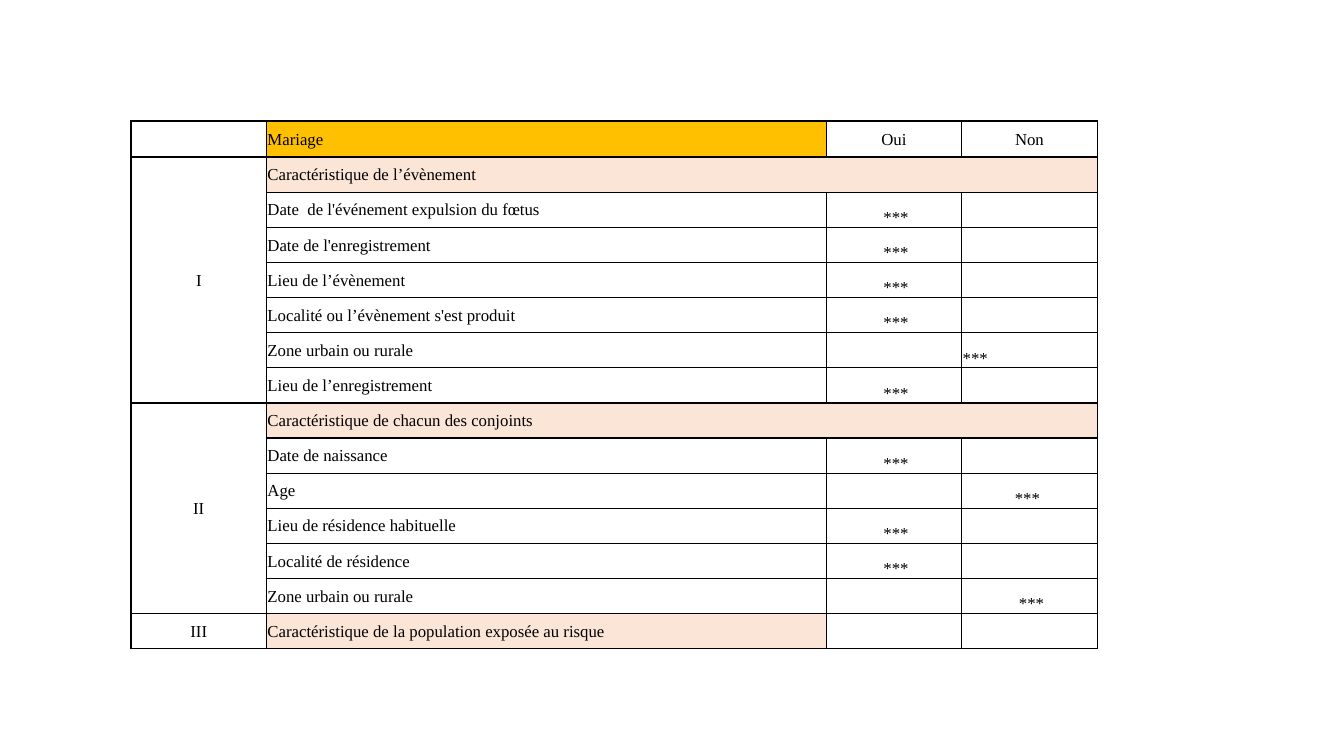
from lxml.etree import SubElement
from pptx import Presentation
from pptx.dml.color import RGBColor
from pptx.enum.text import MSO_ANCHOR as ANCHOR, PP_ALIGN as ALIGN
from pptx.oxml.ns import qn
from pptx.util import Pt

FONT = "Times New Roman"
COLORS = {"ink": "000000", "head": "FFC000", "group": "FBE5D6"}
WIDTHS = [96.8, 399.8, 96.8, 96.8]
HEAD_H, ROW_H = 25.8, 25.1
YES = " ***"
NO = "*** "

# Each row: numeral, label, Oui, Non
ROWS = [
    ("", "Mariage", "Oui", "Non"),
    ("I", "Caractéristique de l’évènement", "", ""),
    ("", "Date  de l'événement expulsion du fœtus", YES, ""),
    ("", "Date de l'enregistrement", YES, ""),
    ("", "Lieu de l’évènement", YES, ""),
    ("", "Localité ou l’évènement s'est produit", YES, ""),
    ("", "Zone urbain ou rurale", "", NO),
    ("", "Lieu de l’enregistrement", YES, ""),
    ("II", "Caractéristique de chacun des conjoints", "", ""),
    ("", "Date de naissance", YES, ""),
    ("", "Age", "", NO),
    ("", "Lieu de résidence habituelle", YES, ""),
    ("", "Localité de résidence", YES, ""),
    ("", "Zone urbain ou rurale", "", YES),
    ("III", "Caractéristique de la population exposée au risque", "", ""),
]
GROUPS = [(1, 7), (8, 13)]  # first and last row of each merged numeral
FILLS = {0: "head", 1: "group", 8: "group", 14: "group"}
LEFT_MARK = (6, 3)  # the one mark that is not centred


def color(name):
    return RGBColor.from_string(COLORS[name])


def add_border(cell):
    props = cell._tc.get_or_add_tcPr()
    for side in ("a:lnL", "a:lnR", "a:lnT", "a:lnB"):
        line = SubElement(props, qn(side), w=str(Pt(1)))
        fill = SubElement(line, qn("a:solidFill"))
        SubElement(fill, qn("a:srgbClr"), val=COLORS["ink"])


def set_fill(cell, name):
    if name:
        cell.fill.solid()
        cell.fill.fore_color.rgb = color(name)
    else:
        cell.fill.background()


def set_text(cell, text, align):
    cell.margin_left = cell.margin_right = cell.margin_top = Pt(0.7)
    cell.margin_bottom = 0
    cell.vertical_anchor = ANCHOR.BOTTOM if "*" in text else ANCHOR.MIDDLE
    cell.text = text
    para = cell.text_frame.paragraphs[0]
    para.alignment = align
    font = para.font
    font.name, font.size = FONT, Pt(12)
    font.color.rgb = color("ink")


def add_grid(slide):
    height = HEAD_H + ROW_H * (len(ROWS) - 1)
    frame = slide.shapes.add_table(len(ROWS), len(WIDTHS), Pt(93.6), Pt(86.4),
                                   Pt(sum(WIDTHS)), Pt(height))
    table = frame.table
    table.first_row = table.horz_banding = False
    for col, width in zip(table.columns, WIDTHS):
        col.width = Pt(width)
    for r, texts in enumerate(ROWS):
        table.rows[r].height = Pt(ROW_H if r else HEAD_H)
        for c, text in enumerate(texts):
            cell = table.cell(r, c)
            left = c == 1 or (r, c) == LEFT_MARK
            add_border(cell)
            set_fill(cell, FILLS.get(r) if c == 1 else None)
            set_text(cell, text, ALIGN.LEFT if left else ALIGN.CENTER)
    for first, last in GROUPS:
        table.cell(first, 0).merge(table.cell(last, 0))
        table.cell(first, 1).merge(table.cell(first, 3))


def main():
    deck = Presentation()
    deck.slide_width, deck.slide_height = Pt(960), Pt(540)
    add_grid(deck.slides.add_slide(deck.slide_layouts[6]))
    deck.save("out.pptx")


if __name__ == "__main__":
    main()
